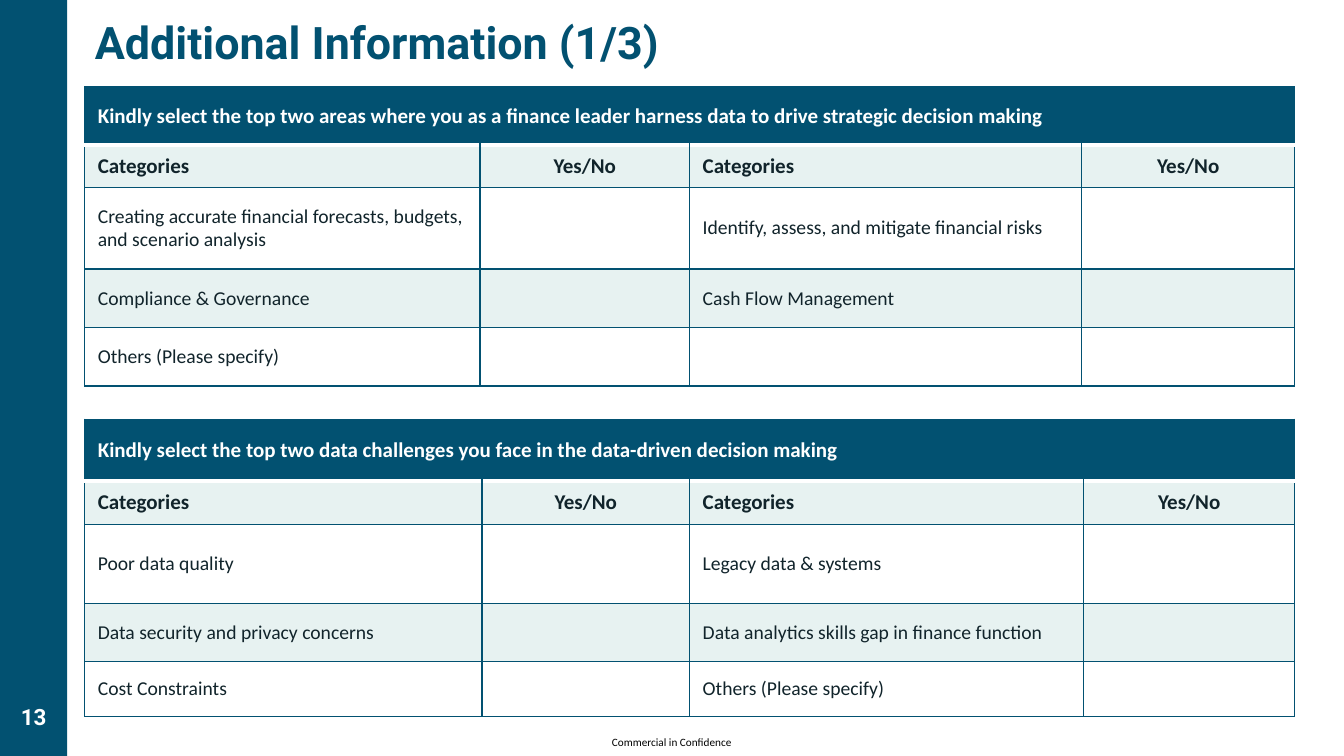
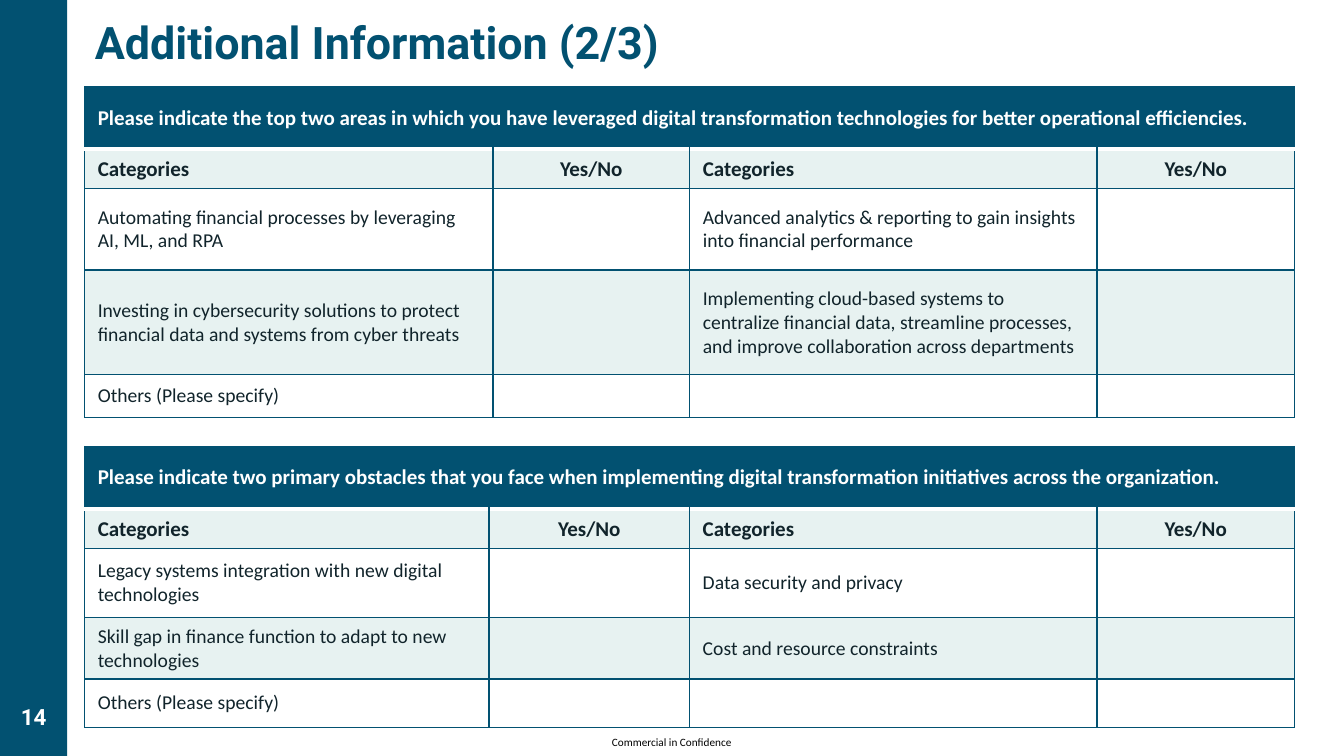
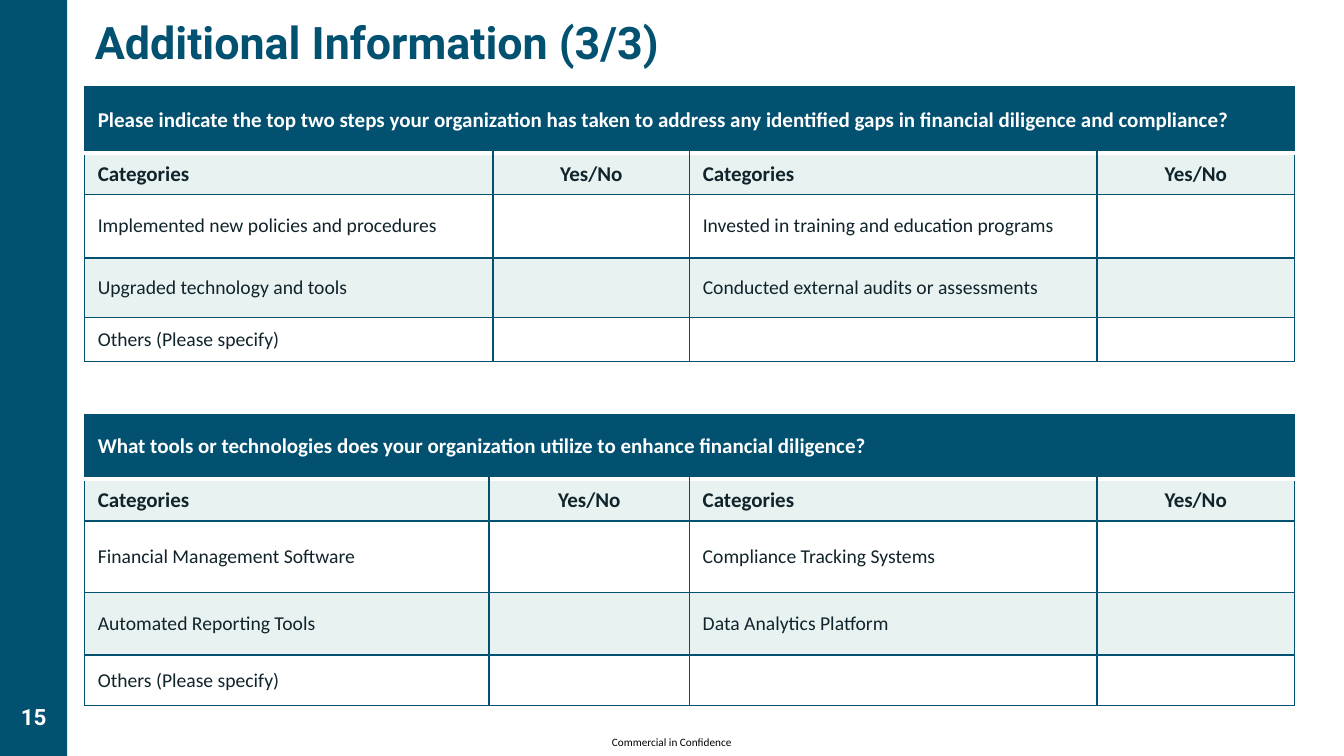
from dataclasses import dataclass

from lxml import etree
from pptx import Presentation
from pptx import util as u
from pptx.dml.color import RGBColor
from pptx.enum import shapes, text
from pptx.oxml import ns

# Shared look
SLIDE_W, SLIDE_H = 13.33, 7.5
TEAL, MINT, WHITE, INK, BLACK = "025171", "E7F2F1", "FFFFFF", "11242B", "000000"
BODY_FONT, HEAD_FONT = "Calibri", "Roboto"
BAND_W = SLIDE_W / 20
TABLE_LEFT, TABLE_W = 0.84, 12
HALF_W = TABLE_W / 2
UPPER_TOP = 0.86
FIRST_PAGE = 13
OTHERS = "Others (Please specify)"
LEFT, CENTER = text.PP_ALIGN.LEFT, text.PP_ALIGN.CENTER


@dataclass(frozen=True)
class Style:
    size: float
    color: str
    bold: bool = False
    font: str = BODY_FONT
    align: text.PP_ALIGN = LEFT


@dataclass(frozen=True)
class Survey:
    """One question with pairs of answers; each half is a category and a Yes/No column."""
    question: str
    top: float
    categories: tuple[float, float]
    rows: tuple[float, ...]
    answers: tuple[tuple[str, str], ...]


TITLE = Style(32, TEAL, True, HEAD_FONT)
PAGE = Style(16, WHITE, True, HEAD_FONT, CENTER)
FOOTER = Style(8, BLACK)
QUESTION = Style(15, WHITE, True)
HEADING = Style(15, INK, True)
YES_NO = Style(15, INK, True, align=CENTER)
ANSWER = Style(14, INK)

PAGES = (
    (
        Survey(
            "Kindly select the top two areas where you as a finance leader harness data "
            "to drive strategic decision making",
            UPPER_TOP, (3.92, 3.89), (0.58, 0.42, 0.81, 0.58, 0.58),
            (("Creating accurate financial forecasts, budgets, and scenario analysis",
              "Identify, assess, and mitigate financial risks"),
             ("Compliance & Governance", "Cash Flow Management"),
             (OTHERS, "")),
        ),
        Survey(
            "Kindly select the top two data challenges you face in the data-driven decision making",
            4.16, (3.94, 3.91), (0.61, 0.43, 0.79, 0.57, 0.55),
            (("Poor data quality", "Legacy data & systems"),
             ("Data security and privacy concerns", "Data analytics skills gap in finance function"),
             ("Cost Constraints", OTHERS)),
        ),
    ),
    (
        Survey(
            "Please indicate the top two areas in which you have leveraged digital transformation "
            "technologies for better operational efficiencies.",
            UPPER_TOP, (4.05, 4.04), (0.62, 0.37, 0.81, 1.04, 0.42),
            (("Automating financial processes by leveraging AI, ML, and RPA",
              "Advanced analytics & reporting to gain insights into financial performance"),
             ("Investing in cybersecurity solutions to protect financial data and systems "
              "from cyber threats",
              "Implementing cloud-based systems to centralize financial data, streamline processes, "
              "and improve collaboration across departments"),
             (OTHERS, "")),
        ),
        Survey(
            "Please indicate two primary obstacles that you face when implementing digital "
            "transformation initiatives across the organization.",
            4.43, (4.01, 4.04), (0.62, 0.38, 0.69, 0.6, 0.48),
            (("Legacy systems integration with new digital technologies", "Data security and privacy"),
             ("Skill gap in finance function to adapt to new technologies",
              "Cost and resource constraints"),
             (OTHERS, "")),
        ),
    ),
    (
        Survey(
            "Please indicate the top two steps your organization has taken to address any identified "
            "gaps in financial diligence and compliance?",
            UPPER_TOP, (4.05, 4.04), (0.66, 0.41, 0.63, 0.59, 0.44),
            (("Implemented new policies and procedures", "Invested in training and education programs"),
             ("Upgraded technology and tools", "Conducted external audits or assessments"),
             (OTHERS, "")),
        ),
        Survey(
            "What tools or technologies does your organization utilize to enhance financial diligence?",
            4.11, (4.01, 4.04), (0.64, 0.42, 0.71, 0.62, 0.5),
            (("Financial Management Software", "Compliance Tracking Systems"),
             ("Automated Reporting Tools", "Data Analytics Platform"),
             (OTHERS, "")),
        ),
    ),
)


def rgb(value: str) -> RGBColor:
    return RGBColor.from_string(value)


def write(frame, words: str, style: Style) -> None:
    paragraph = frame.paragraphs[0]
    paragraph.alignment = style.align
    if not words:
        # An empty cell keeps the text size so its row does not grow
        end = etree.SubElement(paragraph._p, ns.qn("a:endParaRPr"))
        end.set("sz", str(int(style.size * 100)))
        return
    run = paragraph.add_run()
    run.text = words
    run.font.size = u.Pt(style.size)
    run.font.name = style.font
    run.font.bold = style.bold
    run.font.color.rgb = rgb(style.color)


def add_label(slide, box: tuple[float, ...], words: str, style: Style, inset: bool = True) -> None:
    frame = slide.shapes.add_textbox(*map(u.Inches, box)).text_frame
    frame.word_wrap = True
    if not inset:
        frame.margin_left = frame.margin_right = frame.margin_top = frame.margin_bottom = 0
    write(frame, words, style)


def add_frame(slide, title: str, page: int) -> None:
    """Title, side band, page number and footer."""
    heading = slide.shapes.title
    heading.left, heading.top = u.Inches(TABLE_LEFT), u.Inches(0.1)
    heading.width, heading.height = u.Inches(11.5), u.Inches(0.83)
    heading.text_frame.vertical_anchor = text.MSO_ANCHOR.TOP
    heading.text_frame.auto_size = text.MSO_AUTO_SIZE.NONE
    write(heading.text_frame, title, TITLE)

    band = slide.shapes.add_shape(
        shapes.MSO_SHAPE.RECTANGLE, 0, 0, u.Inches(BAND_W), u.Inches(SLIDE_H))
    band.shadow.inherit = False
    band.fill.solid()
    band.fill.fore_color.rgb = rgb(TEAL)
    band.line.fill.background()

    add_label(slide, (0, 6.93, BAND_W, 0.37), str(page), PAGE)
    add_label(slide, (6.07, 7.3, 1.3, 0.13), "Commercial in Confidence", FOOTER, inset=False)


def set_border(cell, side: str, color: str, points: float) -> None:
    line = etree.SubElement(cell._tc.get_or_add_tcPr(), ns.qn(f"a:ln{side}"))
    line.set("w", str(u.Pt(points)))
    fill = etree.SubElement(line, ns.qn("a:solidFill"))
    etree.SubElement(fill, ns.qn("a:srgbClr")).set("val", color)


def format_cell(cell, row: int) -> None:
    cell.margin_left = cell.margin_right = u.Inches(0.13)
    cell.margin_top = cell.margin_bottom = u.Inches(0.07)
    cell.vertical_anchor = text.MSO_ANCHOR.MIDDLE
    # A thick white rule parts the question from its answers
    white_side = {0: "B", 1: "T"}.get(row)
    for side in "LRTB":
        set_border(cell, side, *((WHITE, 3) if side == white_side else (TEAL, 1)))
    cell.fill.solid()
    cell.fill.fore_color.rgb = rgb(TEAL if row == 0 else MINT if row % 2 else WHITE)


def add_survey(slide, survey: Survey) -> None:
    widths = [w for category in survey.categories for w in (category, HALF_W - category)]
    table = slide.shapes.add_table(
        len(survey.rows), len(widths), u.Inches(TABLE_LEFT), u.Inches(survey.top),
        u.Inches(TABLE_W), u.Inches(sum(survey.rows))).table
    table.first_row = table.horz_banding = False
    for column, width in zip(table.columns, widths):
        column.width = u.Inches(width)
    for row, height in zip(table.rows, survey.rows):
        row.height = u.Inches(height)

    lines = [
        [(survey.question, QUESTION)] + [("", QUESTION)] * 3,
        [("Categories", HEADING), ("Yes/No", YES_NO)] * 2,
    ]
    lines += [[(left, ANSWER), ("", ANSWER), (right, ANSWER), ("", ANSWER)]
              for left, right in survey.answers]
    for r, line in enumerate(lines):
        for c, (words, style) in enumerate(line):
            cell = table.cell(r, c)
            format_cell(cell, r)
            write(cell.text_frame, words, style)
    table.cell(0, 0).merge(table.cell(0, len(widths) - 1))


def main() -> None:
    prs = Presentation()
    prs.slide_width, prs.slide_height = u.Inches(SLIDE_W), u.Inches(SLIDE_H)
    title_only = prs.slide_layouts[5]
    for index, surveys in enumerate(PAGES):
        slide = prs.slides.add_slide(title_only)
        add_frame(slide, f"Additional Information ({index + 1}/{len(PAGES)})", FIRST_PAGE + index)
        for survey in surveys:
            add_survey(slide, survey)
    prs.save("out.pptx")


if __name__ == "__main__":
    main()
